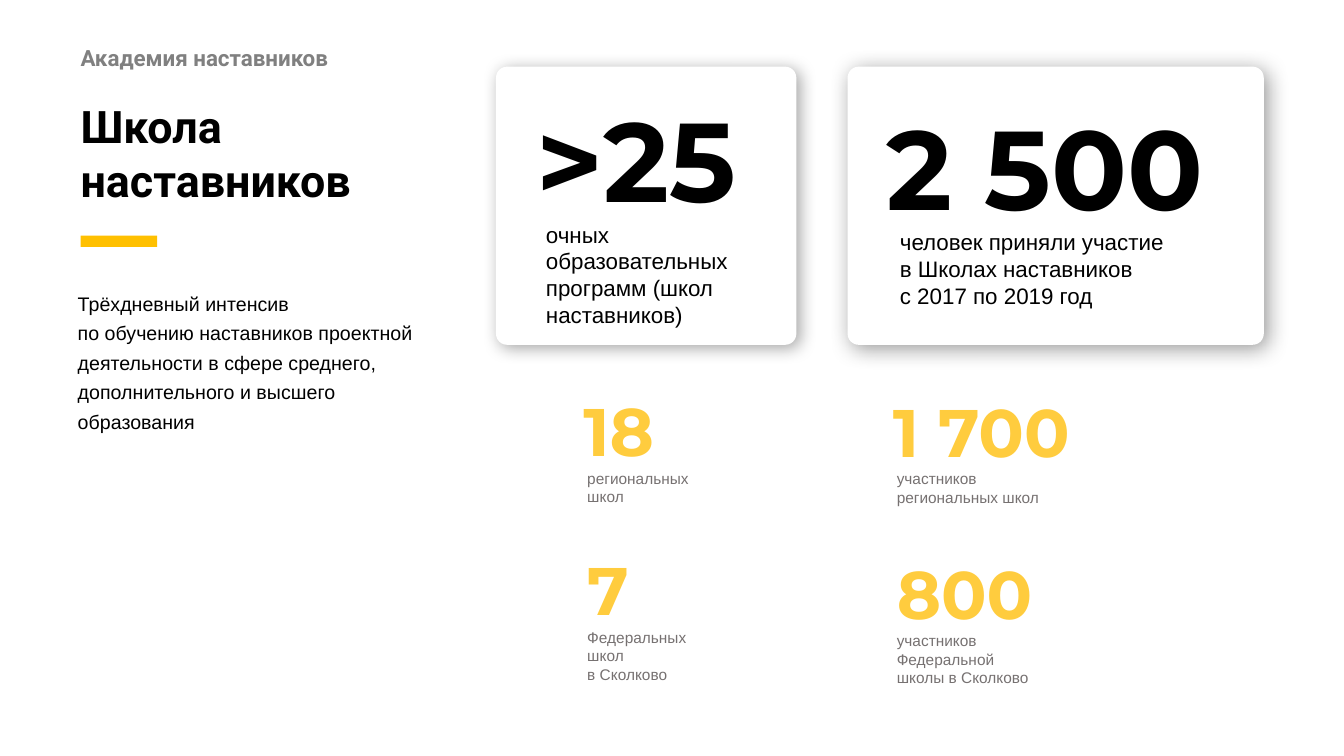
import pptx
import pptx.dml.color
import pptx.enum.shapes
import pptx.enum.text
import pptx.oxml
import pptx.oxml.ns
import pptx.util

Cm = pptx.util.Cm
COLORS = {"white": "FFFFFF", "black": "000000", "gray": "808080", "caption": "767171",
          "accent": "FFC000", "number": "FFCC3E"}
INSETS = (0.25, 0.13, 0.25, 0.13)
HEADING_INSETS = (0, 0.13, 0.25, 0.13)

# Format values of each kind of text
FORMATS = {
    "section": {"size": 16, "name": "Roboto", "bold": True, "color": "gray"},
    "title": {"size": 32, "name": "Roboto", "bold": True, "color": "black"},
    "body": {"size": 14, "name": "Arial", "bold": False, "color": "black"},
    "large number": {"size": 80, "name": "Montserrat", "bold": True, "color": "black"},
    "large caption": {"size": 16, "name": "Arial", "bold": False, "color": "black"},
    "small number": {"size": 48, "name": "Montserrat", "bold": True, "color": "number"},
    "small caption": {"size": 11, "name": "Arial", "bold": False, "color": "caption"},
}
CAPTION_DROP = {"large": 3.27, "small": 2.0}


def rgb(color):
    return pptx.dml.color.RGBColor.from_string(COLORS[color])


def add_text(shapes, box, text, kind, insets=INSETS, wrap=True, line_spacing=None):
    shape = shapes.add_textbox(*map(Cm, box))
    frame = shape.text_frame
    frame.word_wrap = wrap
    frame.auto_size = pptx.enum.text.MSO_AUTO_SIZE.SHAPE_TO_FIT_TEXT
    for side, inset in zip(("left", "top", "right", "bottom"), insets):
        setattr(frame, f"margin_{side}", Cm(inset))
    paragraph = frame.paragraphs[0]
    paragraph.text = text.replace("\n", "\v")
    paragraph.line_spacing = line_spacing
    for run in paragraph.runs:
        values = dict(FORMATS[kind])
        run.font.color.rgb = rgb(values.pop("color"))
        values["size"] = pptx.util.Pt(values["size"])
        for name, value in values.items():
            setattr(run.font, name, value)


def add_panel(shapes, preset, box, color):
    shape = shapes.add_shape(preset, *map(Cm, box))
    shape.shadow.inherit = False
    shape.fill.solid()
    shape.fill.fore_color.rgb = rgb(color)
    shape.line.fill.background()
    return shape


def add_intro(slide, left, top):
    """Left column: section name, title, accent bar and description."""
    shapes = slide.shapes
    add_text(shapes, (left, top, 14.9, 0.94), "Академия наставников", "section", HEADING_INSETS)
    add_text(shapes, (left, top + 1.37, 14.9, 1.63), "Школа \nнаставников", "title", HEADING_INSETS)
    add_panel(shapes, pptx.enum.shapes.MSO_SHAPE.RECTANGLE, (left, top + 4.95, 1.93, 0.28), "accent")
    add_text(shapes, (left - 0.07, top + 6.22, 8.66, 3.66),
             "Трёхдневный интенсив \nпо обучению наставников проектной деятельности "
             "в сфере среднего, дополнительного и высшего образования",
             "body", (0, 0, 0, 0), line_spacing=1.25)


def add_card(slide, box, blur, opacity):
    """White rounded card with a soft shadow."""
    card = add_panel(slide.shapes, pptx.enum.shapes.MSO_SHAPE.ROUNDED_RECTANGLE, box, "white")
    card.adjustments[0] = 0.04
    effects = card.element.spPr.find(pptx.oxml.ns.qn("a:effectLst"))
    effects.append(pptx.oxml.parse_xml(
        f'<a:outerShdw {pptx.oxml.ns.nsdecls("a")} blurRad="{pptx.util.Pt(blur)}" '
        f'dist="{pptx.util.Pt(3)}" dir="2700000" algn="tl" rotWithShape="0">'
        f'<a:srgbClr val="{COLORS["black"]}"><a:alpha val="{opacity * 1000}"/></a:srgbClr>'
        '</a:outerShdw>'))


def text_height(kind, lines):
    return lines * pptx.util.Pt(FORMATS[kind]["size"] * 1.2).cm + 0.25


def add_statistic(slide, scale, box, number, number_width, shift, caption, lines):
    """Number over its caption; shift moves the number left of the caption."""
    left, top, width = box
    shapes = slide.shapes.add_group_shape().shapes
    number_kind, caption_kind = f"{scale} number", f"{scale} caption"
    add_text(shapes, (left - shift, top, number_width, text_height(number_kind, 1)),
             number, number_kind, wrap=False)
    add_text(shapes, (left, top + CAPTION_DROP[scale], width, text_height(caption_kind, lines)),
             caption, caption_kind)


def main():
    presentation = pptx.Presentation()
    presentation.slide_width, presentation.slide_height = Cm(33.87), Cm(19.05)
    slide = presentation.slides.add_slide(presentation.slide_layouts[6])

    add_intro(slide, 2.03, 0.99)

    # Cards
    add_card(slide, (12.5, 1.68, 7.57, 7.01), 12, 34)
    add_card(slide, (21.36, 1.68, 10.49, 7.01), 16, 40)

    # Statistics: scale, box, number, number width, shift, caption, caption lines
    for statistic in (
        ("large", (13.51, 2.16, 5.84), ">25", 6.2, 0.23,
         "очных образовательных программ (школ наставников)", 4),
        ("large", (22.43, 2.36, 9.07), "2 500", 9.07, 0.33,
         "человек приняли участие \nв Школах наставников \nс 2017 по 2019 год", 3),
        ("small", (14.55, 9.68, 5.84), "18", 2.79, 0.1, "региональных \nшкол", 2),
        ("small", (22.35, 9.7, 5.84), "1 700", 5.64, 0.1, "участников \nрегиональных школ", 2),
        ("small", (14.55, 13.69, 5.84), "7", 1.65, 0, "Федеральных \nшкол \nв Сколково", 3),
        ("small", (22.35, 13.78, 5.84), "800", 3.94, 0,
         "участников \nФедеральной \nшколы в Сколково", 3),
    ):
        add_statistic(slide, *statistic)

    presentation.save("out.pptx")


if __name__ == "__main__":
    main()
